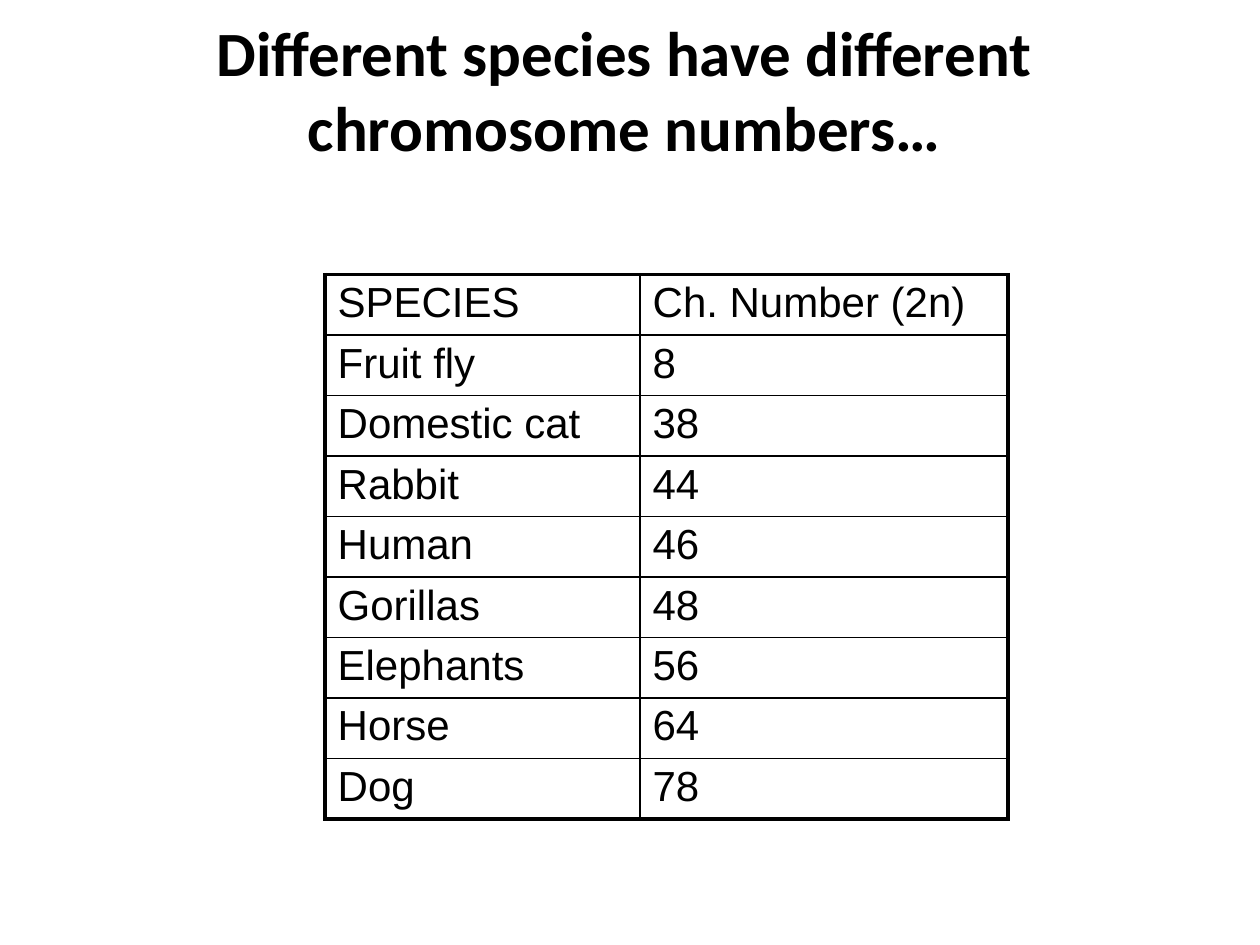
from dataclasses import dataclass

import pptx
import pptx.dml.color
import pptx.enum.text
import pptx.oxml
import pptx.oxml.ns
import pptx.util
from pptx.util import Inches


@dataclass(frozen=True)
class Theme:
    ink: str = "000000"
    title_font: str = "Calibri"
    table_font: str = "Arial"
    title_size: int = 36
    table_size: int = 24
    outer_line: float = 2.25
    inner_line: float = 1


theme = Theme()


def write_text(frame, text, *, font, size, bold=False,
               align=pptx.enum.text.PP_ALIGN.LEFT):
    para = frame.paragraphs[0]
    para.alignment = align
    span = para.add_run()
    span.text = text
    span.font.name = font
    span.font.size = pptx.util.Pt(size)
    span.font.bold = bold
    span.font.color.rgb = pptx.dml.color.RGBColor.from_string(theme.ink)


def set_borders(cell, outer_sides):
    """Rule all four sides, with the heavier line on the outer ones."""
    properties = cell._tc.get_or_add_tcPr()
    for place, side in enumerate("LRTB"):
        points = theme.outer_line if side in outer_sides else theme.inner_line
        line = pptx.oxml.parse_xml(
            f'<a:ln{side} {pptx.oxml.ns.nsdecls("a")} w="{pptx.util.Pt(points)}">'
            f'<a:solidFill><a:srgbClr val="{theme.ink}"/></a:solidFill></a:ln{side}>')
        properties.insert(place, line)


deck = pptx.Presentation()
deck.slide_width = Inches(10)
deck.slide_height = Inches(7.5)
page = deck.slides.add_slide(deck.slide_layouts[6])

title_box = page.shapes.add_textbox(Inches(0.33), Inches(0.08), Inches(9.25), Inches(1.25))
title_box.text_frame.word_wrap = True
title_box.text_frame.vertical_anchor = pptx.enum.text.MSO_ANCHOR.MIDDLE
write_text(title_box.text_frame, "Different species have different chromosome numbers…",
           font=theme.title_font, size=theme.title_size, bold=True,
           align=pptx.enum.text.PP_ALIGN.CENTER)

species_rows = [
    ("SPECIES", "Ch. Number (2n)"),
    ("Fruit fly", "8"),
    ("Domestic cat", "38"),
    ("Rabbit", "44"),
    ("Human", "46"),
    ("Gorillas", "48"),
    ("Elephants", "56"),
    ("Horse", "64"),
    ("Dog", "78"),
]
column_widths = [2.5, 2.92]
row_height = 0.47
last_row = len(species_rows) - 1

table = page.shapes.add_table(
    len(species_rows), len(column_widths), Inches(2.58), Inches(2.18),
    Inches(sum(column_widths)), Inches(row_height * len(species_rows))).table
table.first_row = False
table.horz_banding = False
for column, width in zip(table.columns, column_widths):
    column.width = Inches(width)

for row_index, values in enumerate(species_rows):
    table.rows[row_index].height = Inches(row_height)
    for column_index, value in enumerate(values):
        cell = table.cell(row_index, column_index)
        cell.margin_top = cell.margin_bottom = Inches(0.04)
        cell.fill.background()
        write_text(cell.text_frame, value, font=theme.table_font, size=theme.table_size)
        outer_sides = "LR"[column_index]
        if row_index == 0:
            outer_sides += "T"
        if row_index == last_row:
            outer_sides += "B"
        set_borders(cell, outer_sides)

deck.save("out.pptx")
